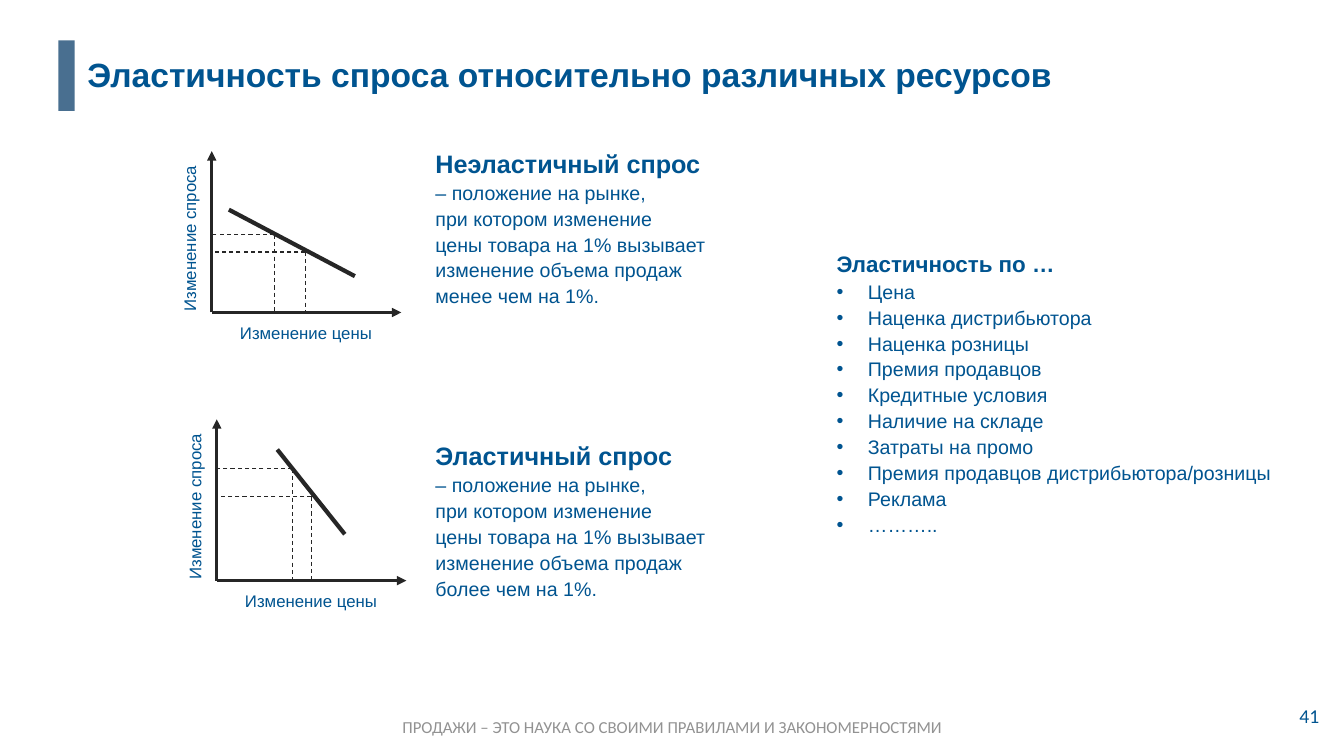
from lxml import etree
from pptx import Presentation
from pptx.dml.color import RGBColor
from pptx.enum.dml import MSO_LINE_DASH_STYLE as Dash
from pptx.enum.shapes import MSO_CONNECTOR as Connector, MSO_SHAPE as Preset
from pptx.enum.text import MSO_ANCHOR as Anchor, MSO_AUTO_SIZE as AutoSize, PP_ALIGN as Align
from pptx.oxml.ns import qn
from pptx.util import Inches, Pt

# Content
TITLE = "Эластичность спроса относительно различных ресурсов "
FOOTER = "ПРОДАЖИ – ЭТО НАУКА СО СВОИМИ ПРАВИЛАМИ И ЗАКОНОМЕРНОСТЯМИ"
PAGE_NUMBER = "41"
AXIS_LABELS = {"price": "Изменение цены", "demand": "Изменение спроса"}
DEFINITION = ["– положение на рынке,", "при котором изменение",
              "цены товара на 1% вызывает", "изменение объема продаж"]
FACTORS_HEADING = "Эластичность по …"
FACTORS = ["Цена", "Наценка дистрибьютора", "Наценка розницы", "Премия продавцов",
           "Кредитные условия", "Наличие на складе", "Затраты на промо",
           "Премия продавцов дистрибьютора/розницы", "Реклама", "……….."]

# Curve and guide points are measured right of and above each origin
DEMAND_TYPES = [
    {"heading": "Неэластичный спрос", "ending": "менее чем на 1%.",
     "text_top": 1.39, "origin": (2.1, 3.1),
     "curve": [(0.17, 1.02), (1.42, 0.36)], "guides": [(0.62, 0.77), (0.93, 0.6)]},
    {"heading": "Эластичный спрос", "ending": "более чем на 1%.",
     "text_top": 4.29, "origin": (2.15, 5.76),
     "curve": [(0.6, 1.3), (1.27, 0.46)], "guides": [(0.75, 1.11), (0.94, 0.83)]},
]
AXIS_LENGTHS = {"price": 1.88, "demand": 1.6}

THEME = {
    "text": RGBColor.from_string("005490"),
    "muted": RGBColor.from_string("929292"),
    "accent": RGBColor.from_string("496F90"),
    "ink": RGBColor.from_string("262626"),
    "font": "Arial", "small_font": "Calibri",
    "title": 24, "heading": 18, "subheading": 16, "body": 14, "label": 12,
    "axis": 2.25, "curve": 3, "guide": 0.75,
    "spacing": 1.1, "indent": 0.31,
}


def set_attributes(target, values):
    for name, value in values.items():
        setattr(target, name, value)


def add_text(shapes, box, lines, text_size, wrap=False, inset=None, anchor=Anchor.TOP,
             align=Align.LEFT, spacing=None, color=THEME["text"], **first_format):
    """Add a text box; the first line may have its own format."""
    shape = shapes.add_textbox(*map(Inches, box))
    frame = shape.text_frame
    set_attributes(frame, {"word_wrap": wrap, "vertical_anchor": anchor,
                           "auto_size": AutoSize.SHAPE_TO_FIT_TEXT})
    if inset is not None:
        sides = ("left", "top", "right", "bottom")
        set_attributes(frame, {f"margin_{side}": Inches(inset) for side in sides})
    for index, line in enumerate(lines):
        paragraph = frame.paragraphs[0] if index == 0 else frame.add_paragraph()
        set_attributes(paragraph, {"alignment": align, "line_spacing": spacing})
        run = paragraph.add_run()
        run.text = line
        values = {"size": Pt(text_size), "name": THEME["font"], "bold": False}
        if index == 0:
            values.update(first_format)
        set_attributes(run.font, values)
        run.font.color.rgb = color
    return shape


def add_line(shapes, start, end, width, dashed=False, arrow=False):
    line = shapes.add_connector(Connector.STRAIGHT, *map(Inches, (*start, *end)))
    line.line.color.rgb = THEME["ink"]
    line.line.width = Pt(width)
    if dashed:
        line.line.dash_style = Dash.DASH
    if arrow:
        outline = line._element.spPr.find(qn("a:ln"))
        etree.SubElement(outline, qn("a:tailEnd"), type="triangle")
    etree.SubElement(line._element.spPr, qn("a:effectLst"))


def add_bullet(paragraph):
    properties = paragraph._p.get_or_add_pPr()
    indent = Inches(THEME["indent"])
    properties.set("marL", str(int(indent)))
    properties.set("indent", str(-int(indent)))
    etree.SubElement(properties, qn("a:buFont"), typeface=THEME["font"])
    etree.SubElement(properties, qn("a:buChar"), char="•")


def add_graph(slide, origin, curve, guides):
    shapes = slide.shapes.add_group_shape().shapes
    left, base = origin

    def place(point):
        return left + point[0], base - point[1]

    # Axes and demand curve
    for end in ((0, AXIS_LENGTHS["demand"]), (AXIS_LENGTHS["price"], 0)):
        add_line(shapes, origin, place(end), THEME["axis"], arrow=True)
    add_line(shapes, *map(place, curve), THEME["curve"])

    # Guides from the curve to both axes
    for x, y in guides:
        for foot in ((x, 0), (0, y)):
            add_line(shapes, place((x, y)), place(foot), THEME["guide"], dashed=True)

    # Axis labels
    add_text(shapes, (left + 0.28, base + 0.1, 1.32, 0.2), [AXIS_LABELS["price"]],
             THEME["label"], inset=0)
    label = add_text(shapes, (left - 0.95, base - 0.84, 1.46, 0.2),
                     [AXIS_LABELS["demand"]], THEME["label"], inset=0)
    label.rotation = 270


def main():
    presentation = Presentation()
    set_attributes(presentation, {"slide_width": Inches(13.33), "slide_height": Inches(7.5)})
    slide = presentation.slides.add_slide(presentation.slide_layouts[6])
    shapes = slide.shapes

    # Footer, title bar, page number and title
    add_text(shapes, (3.8, 7.06, 5.74, 0.3), [FOOTER], THEME["label"], align=Align.CENTER,
             name=THEME["small_font"], color=THEME["muted"])
    bar = shapes.add_shape(Preset.RECTANGLE, *map(Inches, (0.58, 0.4, 0.16, 0.7)))
    bar.shadow.inherit = False
    bar.fill.solid()
    bar.fill.fore_color.rgb = THEME["accent"]
    bar.line.fill.background()
    number = add_text(shapes, (12.79, 6.88, 0.44, 0.44), [PAGE_NUMBER], THEME["body"],
                      wrap=True, anchor=Anchor.MIDDLE, name=THEME["small_font"])
    number.text_frame.auto_size = AutoSize.NONE
    add_text(shapes, (0.72, 0.49, 9.95, 0.51), [TITLE], THEME["title"],
             align=Align.CENTER, bold=True)

    # Definitions with their graphs
    for demand in DEMAND_TYPES:
        lines = [demand["heading"], *DEFINITION, demand["ending"]]
        add_text(shapes, (4.22, demand["text_top"], 2.95, 1.71), lines, THEME["body"],
                 spacing=THEME["spacing"], size=Pt(THEME["heading"]), bold=True)
        add_graph(slide, demand["origin"], demand["curve"], demand["guides"])

    # Factors of elasticity
    factors = add_text(shapes, (8.2, 2.41, 4.77, 3.23), [FACTORS_HEADING, *FACTORS],
                       THEME["body"], wrap=True, spacing=THEME["spacing"],
                       size=Pt(THEME["subheading"]), bold=True)
    for paragraph in factors.text_frame.paragraphs[1:]:
        add_bullet(paragraph)

    presentation.save("out.pptx")


if __name__ == "__main__":
    main()
